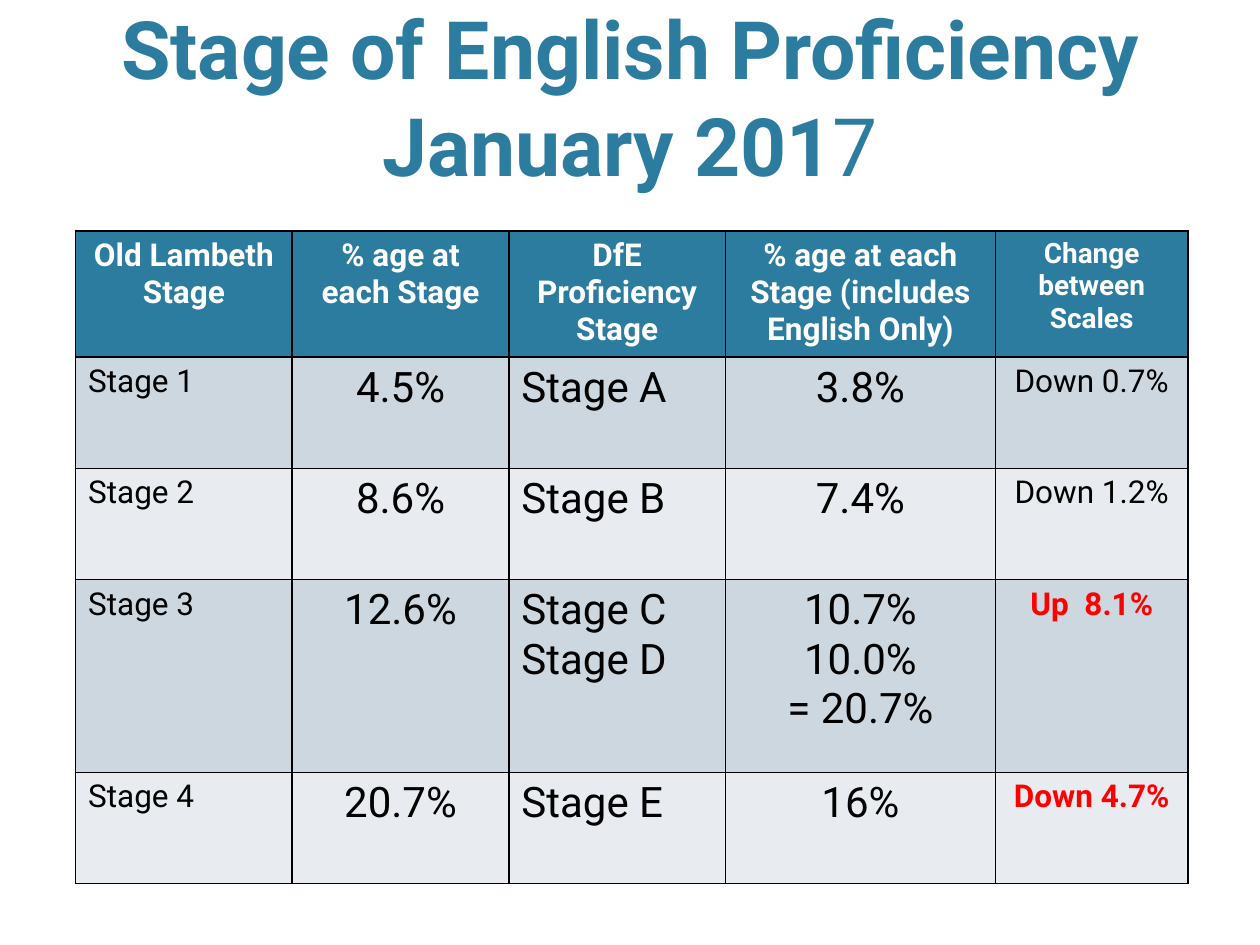
from lxml.etree import SubElement
from pptx import Presentation
from pptx.dml.color import RGBColor
from pptx.enum.text import MSO_ANCHOR as Anchor, PP_ALIGN as Align
from pptx.oxml.ns import qn
from pptx.util import Pt

TEAL = RGBColor(0x2C, 0x7C, 0x9F)
BLUE_GREY = RGBColor(0xCD, 0xD7, 0xDF)
PALE_GREY = RGBColor(0xE8, 0xEC, 0xF0)
WHITE = RGBColor(0xFF, 0xFF, 0xFF)
BLACK = RGBColor(0, 0, 0)
RED = RGBColor(0xFF, 0, 0)

HEADINGS = [
    "Old Lambeth Stage", "% age at each Stage", "DfE Proficiency Stage",
    "% age at each Stage (includes English Only)", "Change between Scales",
]
STAGES = [
    ["Stage 1", "4.5%", "Stage A", "3.8%", "Down 0.7%"],
    ["Stage 2", "8.6%", "Stage B", "7.4%", "Down 1.2%"],
    ["Stage 3", "12.6%", "Stage C\nStage D", "10.7%\n10.0%\n= 20.7%", "Up  8.1%"],
    ["Stage 4", "20.7%", "Stage E", "16%", "Down 4.7%"],
]
LARGE_CHANGES = {"Up  8.1%", "Down 4.7%"}
COLUMN_WIDTHS = [123.8, 123.8, 123.8, 154.2, 110.2]
ROW_HEIGHTS = [70.5, 63.6, 63.6, 110.2, 63.6]
HEADING_SIZES = [18, 18, 18, 18, 16]
BODY_SIZES = [18, 24, 24, 24, 18]
BODY_ALIGNMENTS = [Align.LEFT, Align.CENTER, Align.LEFT, Align.CENTER, Align.CENTER]


class SlideBuilder:
    font_name = "Roboto"
    border_width = Pt(1)

    def __init__(self, slide):
        self.slide = slide

    def style(self, font, size, color, bold=False):
        font.name = self.font_name
        font.size = Pt(size)
        font.color.rgb = color
        font.bold = bold

    def title(self, bold_part, light_part, left, top, width, height):
        frame = self.slide.shapes.add_textbox(
            Pt(left), Pt(top), Pt(width), Pt(height)).text_frame
        frame.word_wrap = True
        frame.vertical_anchor = Anchor.BOTTOM
        heading = frame.paragraphs[0]
        heading.alignment = Align.CENTER
        for words, bold in ((bold_part, True), (light_part, False)):
            run = heading.add_run()
            run.text = words
            self.style(run.font, 46, TEAL, bold)

    def table(self, left, top, widths, heights):
        table = self.slide.shapes.add_table(
            len(heights), len(widths), Pt(left), Pt(top),
            Pt(sum(widths)), Pt(sum(heights))).table
        for column, width in zip(table.columns, widths):
            column.width = Pt(width)
        for row, height in zip(table.rows, heights):
            row.height = Pt(height)
        return table

    def cell(self, cell, words, size, color, fill, alignment, bold=False):
        self.borders(cell)
        cell.fill.solid()
        cell.fill.fore_color.rgb = fill
        cell.text = words
        for paragraph in cell.text_frame.paragraphs:
            paragraph.alignment = alignment
            self.style(paragraph.font, size, color, bold)

    def borders(self, cell):
        """Draw all four sides; must run before the cell fill is set."""
        properties = cell._tc.get_or_add_tcPr()
        for side in ("a:lnL", "a:lnR", "a:lnT", "a:lnB"):
            line = SubElement(properties, qn(side), w=str(self.border_width))
            fill = SubElement(line, qn("a:solidFill"))
            SubElement(fill, qn("a:srgbClr"), val=str(BLACK))


def main():
    deck = Presentation()
    deck.slide_width, deck.slide_height = Pt(720), Pt(540)
    builder = SlideBuilder(deck.slides.add_slide(deck.slide_layouts[6]))

    builder.title("Stage of English Proficiency January 201", "7",
                  43.2, 8.6, 633.6, 105.1)
    proficiency = builder.table(43.2, 132, COLUMN_WIDTHS, ROW_HEIGHTS)

    for column, (words, size) in enumerate(zip(HEADINGS, HEADING_SIZES)):
        builder.cell(proficiency.cell(0, column), words, size,
                     WHITE, TEAL, Align.CENTER, bold=True)

    for row, stage in enumerate(STAGES, start=1):
        band = BLUE_GREY if row % 2 else PALE_GREY
        columns = zip(stage, BODY_SIZES, BODY_ALIGNMENTS)
        for column, (words, size, alignment) in enumerate(columns):
            large = words in LARGE_CHANGES
            builder.cell(proficiency.cell(row, column), words, size,
                         RED if large else BLACK, band, alignment, bold=large)

    deck.save("out.pptx")


if __name__ == "__main__":
    main()
